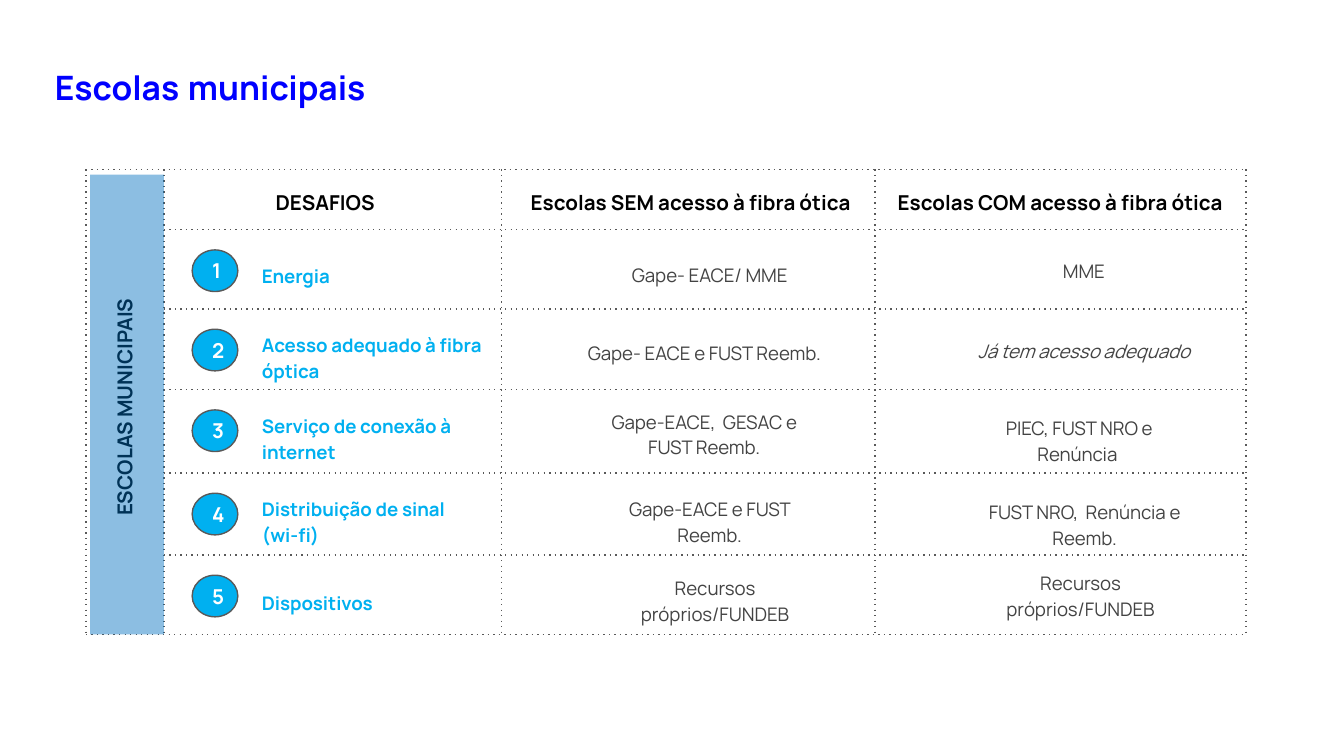
from dataclasses import dataclass

from lxml.etree import SubElement
from pptx import Presentation
from pptx.dml.color import RGBColor
from pptx.enum.dml import MSO_LINE
from pptx.enum.lang import MSO_LANGUAGE_ID
from pptx.enum.shapes import MSO_CONNECTOR, MSO_SHAPE
from pptx.enum.text import MSO_ANCHOR, MSO_AUTO_SIZE, PP_ALIGN
from pptx.oxml.ns import qn
from pptx.util import Inches, Pt


@dataclass(frozen=True)
class Theme:
    font: str = "Manrope"
    title: str = "0000FF"
    heading: str = "000000"
    body: str = "434343"
    accent: str = "00B0F0"
    badge_text: str = "FFFFFF"
    sidebar: str = "0070C0"
    rule: str = "595959"
    title_size: int = 18
    title_gap_size: int = 23
    heading_size: int = 11
    body_size: int = 10
    rule_width: float = 0.75
    inset: float = 0.1


THEME = Theme()
COLUMN_EDGES = [0, 0.58, 3.09, 5.87, 8.63]
ROW_EDGES = [0.45, 1.04, 1.64, 2.26, 2.87, 3.46]
HEADINGS = [
    (0.33, "DESAFIOS"),
    (3.05, "Escolas SEM acesso à fibra ótica"),
    (5.8, "Escolas COM acesso à fibra ótica"),
]
CHALLENGES = [
    (("Energia", 0.14, 0.4),
     ("Gape- EACE/ MME", 3.71, 0.13, 1.86, 0.4),
     ("MME", 6.31, 0.1, 2.23, 0.4)),
    (("Acesso adequado à fibra óptica", 0.06, 0.59),
     ("Gape- EACE e FUST Reemb.", 3.54, 0.12, 2.12, 0.4),
     ("Já tem acesso adequado", 6.31, 0.11, 2.23, 0.4)),
    (("Serviço de conexão à internet", 0.06, 0.59),
     ("Gape-EACE,  GESAC e FUST Reemb.", 3.67, 0.03, 1.86, 0.59),
     ("PIEC, FUST NRO e Renúncia ", 6.46, 0.08, 1.86, 0.59)),
    (("Distribuição de sinal (wi-fi)", 0.06, 0.59),
     ("Gape-EACE e FUST Reemb.", 3.71, 0.06, 1.86, 0.59),
     ("FUST NRO,  Renúncia e Reemb.", 6.5, 0.08, 1.86, 0.59)),
    (("Dispositivos", 0.15, 0.4),
     ("Recursos próprios/FUNDEB", 3.75, 0.04, 1.86, 0.59),
     ("Recursos próprios/FUNDEB", 6.47, 0, 1.86, 0.59)),
]
ITALIC_ENTRIES = {"Já tem acesso adequado"}

HEADING = {"size": THEME.heading_size, "color": THEME.heading, "bold": True}
BADGE = {"size": THEME.heading_size, "color": THEME.badge_text, "bold": True}
LABEL = {"size": THEME.body_size, "color": THEME.accent, "bold": True}
ENTRY = {"size": THEME.body_size, "color": THEME.body}


def set_frame(frame, anchor=MSO_ANCHOR.TOP):
    inset = Inches(THEME.inset)
    formats = {"word_wrap": True, "vertical_anchor": anchor,
               "margin_left": inset, "margin_right": inset,
               "margin_top": inset, "margin_bottom": inset}
    for name, value in formats.items():
        setattr(frame, name, value)


def add_run(paragraph, text, size, color, bold=False, italic=False):
    run = paragraph.add_run()
    run.text = text
    formats = {"name": THEME.font, "size": Pt(size), "bold": bold, "italic": italic,
               "language_id": MSO_LANGUAGE_ID.BRAZILIAN_PORTUGUESE}
    for name, value in formats.items():
        setattr(run.font, name, value)
    run.font.color.rgb = RGBColor.from_string(color)


def add_text(slide, box, runs, align=PP_ALIGN.CENTER, spacing=1.0):
    textbox = slide.shapes.add_textbox(*map(Inches, box))
    set_frame(textbox.text_frame)
    textbox.text_frame.auto_size = MSO_AUTO_SIZE.SHAPE_TO_FIT_TEXT
    paragraph = textbox.text_frame.paragraphs[0]
    paragraph.alignment = align
    paragraph.line_spacing = spacing
    for text, style in runs:
        add_run(paragraph, text, **style)
    return textbox


def add_rule(slide, x1, y1, x2, y2):
    rule = slide.shapes.add_connector(
        MSO_CONNECTOR.STRAIGHT, *map(Inches, (x1, y1, x2, y2)))
    rule.line.color.rgb = RGBColor.from_string(THEME.rule)
    rule.line.width = Pt(THEME.rule_width)
    rule.line.dash_style = MSO_LINE.ROUND_DOT
    properties = rule._element.spPr
    properties.find(f"{qn('a:ln')}/{qn('a:prstDash')}").set("val", "dot")
    SubElement(properties, qn("a:effectLst"))


def add_filled(slide, kind, box, color):
    shape = slide.shapes.add_shape(kind, *map(Inches, box))
    shape.shadow.inherit = False
    shape.fill.solid()
    shape.fill.fore_color.rgb = RGBColor.from_string(color)
    return shape


def add_title(slide, box):
    word = {"size": THEME.title_size, "color": THEME.title, "bold": True}
    gap = {"size": THEME.title_gap_size, "color": THEME.body}
    add_text(slide, box, [("Escolas", word), (" ", gap), ("municipais", word)],
             PP_ALIGN.LEFT)


def add_grid(slide, box):
    left, top, width, height = box
    for edge in COLUMN_EDGES:
        add_rule(slide, left + edge, top, left + edge, top + height)
    for edge in [0, *ROW_EDGES]:
        start = 0 if edge in (0, ROW_EDGES[-1]) else COLUMN_EDGES[1]
        add_rule(slide, left + start, top + edge, left + width, top + edge)


def add_headings(slide, box):
    left, top, _, _ = box
    for offset, heading in HEADINGS:
        add_text(slide, (left + offset, top + 0.06, 2.9, 0.39), [(heading, HEADING)])


def add_sidebar(slide, box):
    left, top, width, height = box
    caption_width, caption_height = 2.9, 0.39
    caption = add_text(
        slide,
        (left + (width - caption_width) / 2 - 0.01,
         top + (height - caption_height) / 2 + 0.02, caption_width, caption_height),
        [("ESCOLAS MUNICIPAIS", HEADING)])
    caption.rotation = 270
    band = add_filled(slide, MSO_SHAPE.RECTANGLE, box, THEME.sidebar)
    band.line.fill.background()
    color = band._element.spPr.find(qn("a:solidFill"))[0]
    SubElement(color, qn("a:alpha"), val="45000")


def add_badge(slide, box, number):
    badge = add_filled(slide, MSO_SHAPE.OVAL, box, THEME.accent)
    badge.line.color.rgb = RGBColor.from_string(THEME.rule)
    badge.line.width = Pt(THEME.rule_width)
    set_frame(badge.text_frame, MSO_ANCHOR.MIDDLE)
    paragraph = badge.text_frame.paragraphs[0]
    paragraph.alignment = PP_ALIGN.CENTER
    add_run(paragraph, str(number), **BADGE)


def add_challenges(slide, box):
    left, top, _, _ = box
    for number, (edge, (label, *entries)) in enumerate(zip(ROW_EDGES, CHALLENGES), 1):
        row_top = top + edge
        add_badge(slide, (left + 0.79, row_top + 0.15, 0.34, 0.31), number)
        name, drop, height = label
        add_text(slide, (left + 1.21, row_top + drop, 1.85, height),
                 [(name, LABEL)], PP_ALIGN.LEFT, 1.15)
        for text, offset, drop, width, height in entries:
            style = {**ENTRY, "italic": text in ITALIC_ENTRIES}
            add_text(slide, (left + offset, row_top + drop, width, height),
                     [(text, style)], spacing=1.15)


def main():
    presentation = Presentation()
    presentation.slide_width = Inches(10)
    presentation.slide_height = Inches(10 * 9 / 16)
    slide = presentation.slides.add_slide(presentation.slide_layouts[6])
    matrix = (0.64, 1.26, COLUMN_EDGES[-1], ROW_EDGES[-1])
    add_title(slide, (0.31, 0.33, 7.52, 0.59))
    add_grid(slide, matrix)
    add_headings(slide, matrix)
    add_challenges(slide, matrix)
    add_sidebar(slide, (0.67, 1.3, 0.55, 3.42))
    presentation.save("out.pptx")


if __name__ == "__main__":
    main()
